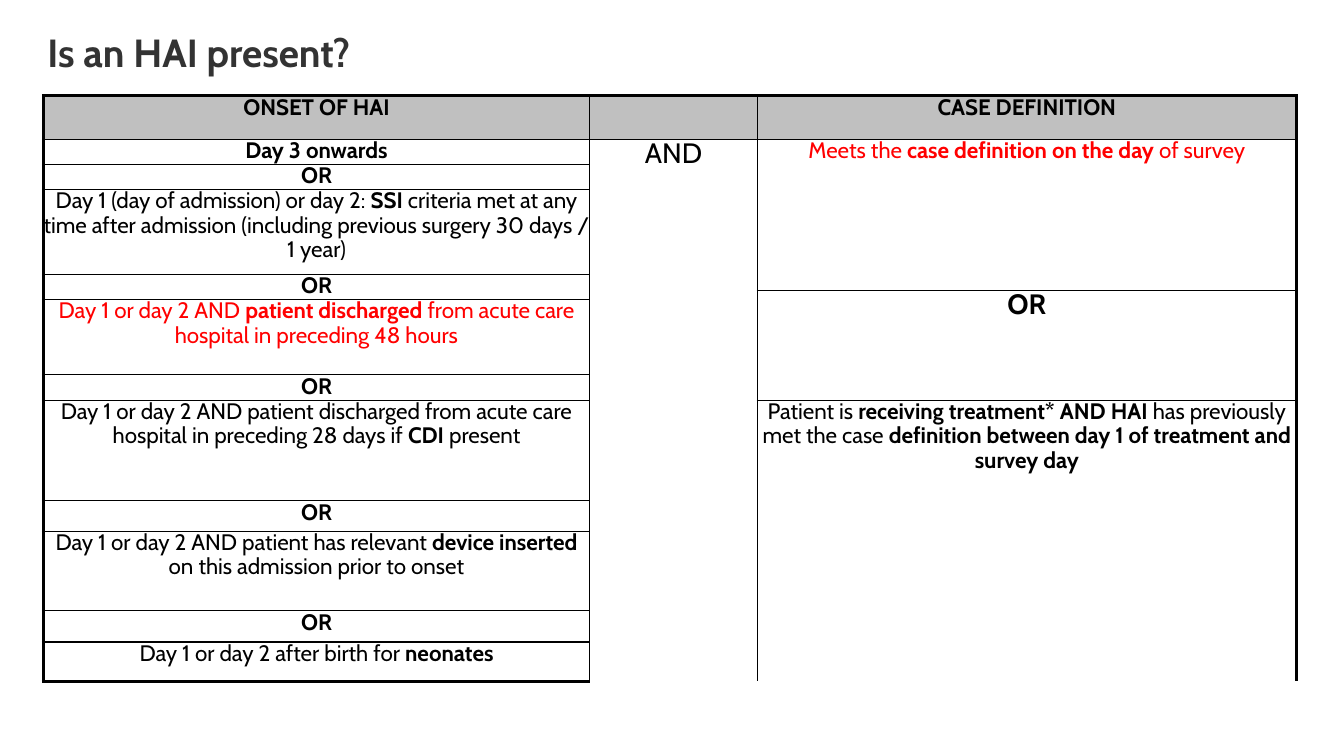
from lxml import etree
from pptx import Presentation
from pptx.dml.color import RGBColor
from pptx.enum.text import MSO_ANCHOR, MSO_AUTO_SIZE, PP_ALIGN
from pptx.oxml.ns import qn
from pptx.util import Inches, Pt

CENTER, LEFT = PP_ALIGN.CENTER, PP_ALIGN.LEFT
TOP = MSO_ANCHOR.TOP
NO_FIT = MSO_AUTO_SIZE.NONE

FONT = "Cabin"
COLORS = {"title": "333333", "text": "000000", "alert": "FF0000",
          "header": "C0C0C0", "border": "000000"}
THIN, THICK = Pt(1), Pt(2.25)

TITLE = "Is an HAI present?"
COLUMN_WIDTHS = [5.42, 1.66, 5.35]
ROW_HEIGHTS = [0.43, 0.25, 0.25, 0.84, 0.16, 0.09, 0.75,
               0.25, 1, 0.3, 0.79, 0.31, 0.39]

# Each column from top to bottom: (rows spanned, text, size, colour).
# Text between ** marks is bold.
COLUMNS = [
    [
        (1, "**ONSET OF HAI**", 16, "text"),
        (1, "**Day 3 onwards**", 16, "text"),
        (1, "**OR**", 16, "text"),
        (1, "Day 1 (day of admission) or day 2: **SSI** criteria met at any time "
            "after admission (including previous surgery 30 days / 1 year)", 16, "text"),
        (2, "**OR**", 16, "text"),
        (1, "Day 1 or day 2 AND **patient discharged** from acute care "
            "hospital in preceding 48 hours", 16, "alert"),
        (1, "**OR**", 16, "text"),
        (1, "Day 1 or day 2 AND patient discharged from acute care "
            "hospital in preceding 28 days if **CDI** present", 16, "text"),
        (1, "**OR**", 16, "text"),
        (1, "Day 1 or day 2 AND patient has relevant **device inserted** "
            "on this admission prior to onset", 16, "text"),
        (1, "**OR**", 16, "text"),
        (1, "Day 1 or day 2 after birth for **neonates**", 16, "text"),
    ],
    [
        (1, "", 16, "text"),
        (12, "AND", 20, "text"),
    ],
    [
        (1, "**CASE DEFINITION**", 16, "text"),
        (4, "Meets the **case definition on the day** of survey", 16, "alert"),
        (3, "**OR**", 20, "text"),
        (5, "Patient is **receiving treatment* AND HAI** has previously met the case "
            "**definition between day 1 of treatment and survey day**", 16, "text"),
    ],
]


def rgb(name):
    return RGBColor.from_string(COLORS[name])


def write(frame, text, size, color, align):
    """Fill a frame with one paragraph, alternating regular and bold spans."""
    para = frame.paragraphs[0]
    para.alignment = align
    para.line_spacing = 0.9
    para.font.name = FONT
    para.font.size = Pt(size)
    para.font.color.rgb = rgb(color)
    for index, part in enumerate(text.split("**")):
        if part:
            span = para.add_run()
            span.text = part
            span.font.bold = index % 2 == 1


def set_borders(cell, widths):
    """Draw the left, right, top and bottom borders; a width of None hides one."""
    properties = cell._tc.get_or_add_tcPr()
    for index, (side, width) in enumerate(zip("LRTB", widths)):
        line = etree.Element(qn(f"a:ln{side}"))
        if width is None:
            etree.SubElement(line, qn("a:noFill"))
        else:
            line.set("w", str(width))
            fill = etree.SubElement(line, qn("a:solidFill"))
            etree.SubElement(fill, qn("a:srgbClr"), val=COLORS["border"])
        properties.insert(index, line)


def style_cell(cell, row, column, first, last):
    """Format a cell of a block that covers the rows first to last."""
    cell.margin_left = cell.margin_right = cell.margin_top = cell.margin_bottom = 0
    cell.vertical_anchor = TOP
    if row == 0:
        cell.fill.solid()
        cell.fill.fore_color.rgb = rgb("header")
    else:
        cell.fill.background()
    left = THICK if column == 0 else THIN
    right = THICK if column == len(COLUMN_WIDTHS) - 1 else THIN
    top = THICK if row == 0 else THIN
    bottom = THICK if row == len(ROW_HEIGHTS) - 1 else THIN
    set_borders(cell, [left, right, top if row == first else None,
                       bottom if row == last else None])


def add_title(slide):
    title = slide.shapes.title
    title.left, title.top = Inches(0.47), Inches(0.33)
    title.width, title.height = Inches(11.28), Inches(0.87)
    frame = title.text_frame
    frame.margin_left = frame.margin_right = frame.margin_top = frame.margin_bottom = 0
    frame.vertical_anchor = TOP
    frame.auto_size = NO_FIT
    frame.word_wrap = True
    write(frame, f"**{TITLE}**", 28, "title", LEFT)


def add_criteria_table(slide):
    table = slide.shapes.add_table(
        len(ROW_HEIGHTS), len(COLUMN_WIDTHS), Inches(0.43), Inches(0.95),
        Inches(sum(COLUMN_WIDTHS)), Inches(sum(ROW_HEIGHTS))).table
    table.first_row = table.horz_banding = False
    for column, width in zip(table.columns, COLUMN_WIDTHS):
        column.width = Inches(width)
    for row, height in zip(table.rows, ROW_HEIGHTS):
        row.height = Inches(height)

    for column, blocks in enumerate(COLUMNS):
        first = 0
        for span, text, size, color in blocks:
            last = first + span - 1
            for row in range(first, last + 1):
                style_cell(table.cell(row, column), row, column, first, last)
            block = table.cell(first, column)
            if span > 1:
                block.merge(table.cell(last, column))
            write(block.text_frame, text, size, color, CENTER)
            first = last + 1


def main():
    deck = Presentation()
    deck.slide_width, deck.slide_height = Inches(13.33), Inches(7.5)
    slide = deck.slides.add_slide(deck.slide_layouts[5])
    add_title(slide)
    add_criteria_table(slide)
    deck.save("out.pptx")


if __name__ == "__main__":
    main()
